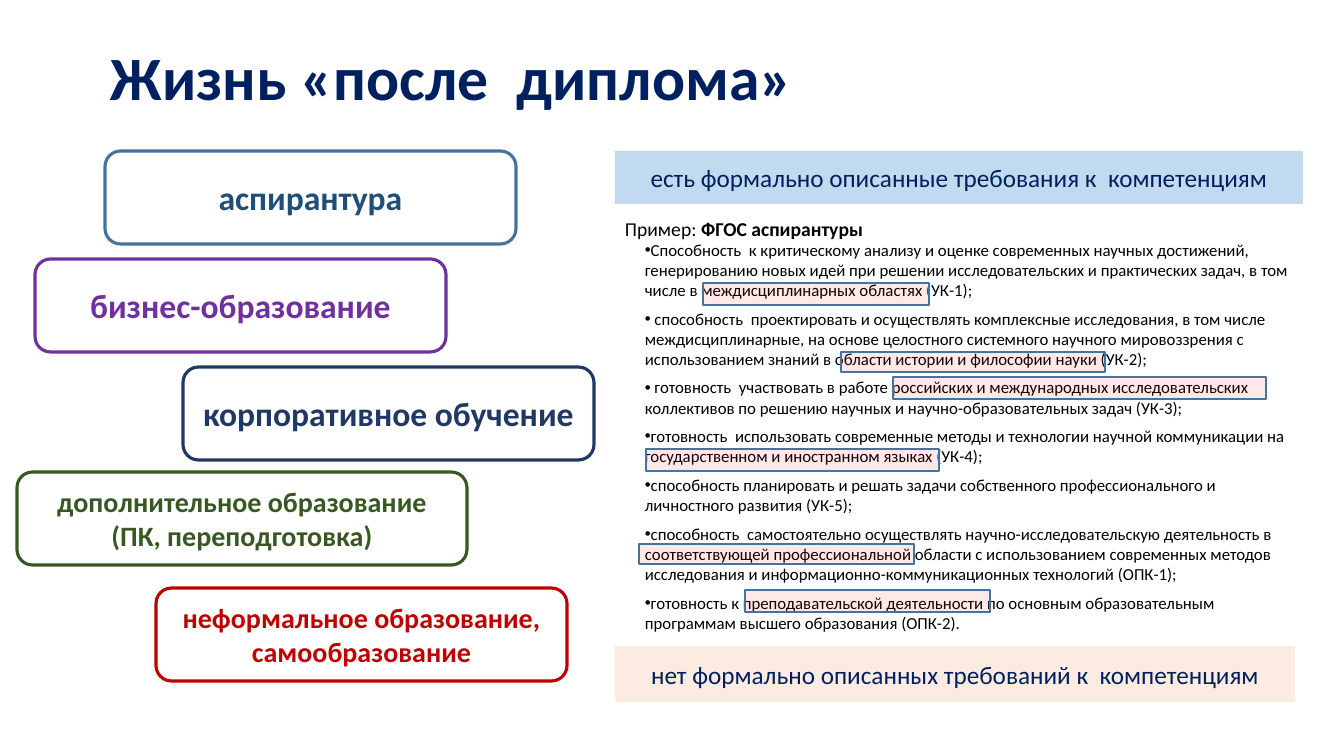
from dataclasses import dataclass
from lxml.etree import SubElement
from pptx import Presentation
from pptx.dml.color import RGBColor
from pptx.enum.shapes import MSO_SHAPE
from pptx.enum.text import MSO_ANCHOR, PP_ALIGN
from pptx.oxml.ns import qn
from pptx.util import Pt

# Content; boxes are (left, top, width, height) in px
TITLE = "Жизнь «после  диплома»"
TITLE_BOX = (87, 42, 1159, 146)

# text lines, left, top, width, size name, colour name
EDUCATION_PATHS = [
    (["аспирантура"], 105, 151, 411, "path", "blue"),
    (["бизнес-образование"], 35, 259, 411, "path", "purple"),
    (["корпоративное обучение"], 183, 367, 411, "path", "navy"),
    (["дополнительное образование (ПК, переподготовка)"], 17, 472, 450, "long_path", "green"),
    (["неформальное образование,", "самообразование"], 156, 588, 411, "long_path", "red"),
]
PATH_HEIGHT = 93

BANNERS = [
    ("есть формально описанные требования к  компетенциям", (615, 151, 688, 53), "described"),
    ("нет формально описанных требований к  компетенциям", (615, 646, 680, 56), "undescribed"),
]

EXAMPLE = ("Пример: ", "ФГОС аспирантуры")
EXAMPLE_BOX = (615, 218, 704, 428)
COMPETENCIES = [
    "Способность  к критическому анализу и оценке современных научных достижений, генерированию "
    "новых идей при решении исследовательских и практических задач, в том числе в "
    "междисциплинарных областях (УК-1);",
    " способность  проектировать и осуществлять комплексные исследования, в том числе "
    "междисциплинарные, на основе целостного системного научного мировоззрения с использованием "
    "знаний в области истории и философии науки (УК-2);",
    " готовность  участвовать в работе российских и международных исследовательских коллективов "
    "по решению научных и научно-образовательных задач (УК-3);",
    "готовность  использовать современные методы и технологии научной коммуникации на "
    "государственном и иностранном языках (УК-4);",
    "способность планировать и решать задачи собственного профессионального и личностного "
    "развития (УК-5);",
    "способность  самостоятельно осуществлять научно-исследовательскую деятельность в "
    "соответствующей профессиональной области с использованием современных методов исследования "
    "и информационно-коммуникационных технологий (ОПК-1);",
    "готовность к преподавательской деятельности по основным образовательным программам высшего "
    "образования (ОПК-2).",
]
HIGHLIGHTS = [
    (703, 283, 226, 22),
    (841, 352, 264, 20),
    (893, 377, 373, 22),
    (639, 544, 275, 20),
    (745, 590, 245, 22),
    (646, 449, 293, 22),
]


@dataclass(frozen=True)
class Theme:
    font = "Calibri"
    colors = {
        "title": "002060", "text": "000000", "white": "FFFFFF", "outline": "43739E",
        "blue": "1F4E79", "purple": "7030A0", "navy": "203864", "green": "385723",
        "red": "C00000", "described": "5B9BD5", "undescribed": "F8CBAD", "highlight": "FF0000",
    }
    sizes = {"title": 44, "path": 24, "long_path": 20, "banner": 18, "example": 14, "item": 12}
    path_line = 2.25
    highlight_line = 1
    banner_alpha = 37
    highlight_alpha = 9


THEME = Theme()
PX = 914400 / 100.8


def px(length):
    return round(length * PX)


def color(name):
    return RGBColor.from_string(THEME.colors[name])


def write(paragraph, text, size="item", ink="text", bold=False, align=PP_ALIGN.LEFT):
    run = paragraph.add_run()
    run.text = text
    run.font.name = THEME.font
    run.font.size = Pt(THEME.sizes[size])
    run.font.bold = bold
    run.font.color.rgb = color(ink)
    paragraph.alignment = align


def add_panel(slide, kind, box, fill, alpha=100, line=None, line_width=1):
    panel = slide.shapes.add_shape(kind, *map(px, box))
    panel.shadow.inherit = False
    panel.fill.solid()
    panel.fill.fore_color.rgb = color(fill)
    if alpha < 100:
        fill_color = panel.fill._xPr.find(qn("a:solidFill"))[0]
        SubElement(fill_color, qn("a:alpha"), val=str(alpha * 1000))
    if line:
        panel.line.color.rgb = color(line)
        panel.line.width = Pt(line_width)
    else:
        panel.line.fill.background()
    panel.text_frame.word_wrap = True
    panel.text_frame.vertical_anchor = MSO_ANCHOR.MIDDLE
    return panel.text_frame


def add_text_area(slide, box):
    frame = slide.shapes.add_textbox(*map(px, box)).text_frame
    frame.word_wrap = True
    return frame


def next_paragraph(frame, index):
    return frame.paragraphs[0] if index == 0 else frame.add_paragraph()


def add_title(slide):
    frame = add_text_area(slide, TITLE_BOX)
    frame.margin_left = px(24)
    heading = frame.paragraphs[0]
    heading.line_spacing = 0.9
    write(heading, TITLE, size="title", ink="title", bold=True)


def add_example(slide):
    frame = add_text_area(slide, EXAMPLE_BOX)
    heading = frame.paragraphs[0]
    heading.line_spacing = 0.7
    heading.space_before = Pt(10)
    for bold, part in enumerate(EXAMPLE):
        write(heading, part, size="example", bold=bool(bold))
    for competency in COMPETENCIES:
        item = frame.add_paragraph()
        write(item, competency)
        item.space_after = Pt(6)
        properties = item._p.get_or_add_pPr()
        properties.set("marL", str(px(20)))
        properties.set("indent", "0")
        SubElement(properties, qn("a:buFont"), typeface="Arial")
        SubElement(properties, qn("a:buChar"), char="•")


def add_education_paths(slide):
    for lines, left, top, width, size, ink in EDUCATION_PATHS:
        outline = "outline" if ink == "blue" else ink
        frame = add_panel(slide, MSO_SHAPE.ROUNDED_RECTANGLE, (left, top, width, PATH_HEIGHT),
                          "white", line=outline, line_width=THEME.path_line)
        for index, line in enumerate(lines):
            write(next_paragraph(frame, index), line, size=size, ink=ink, bold=True,
                  align=PP_ALIGN.CENTER)


def add_banners(slide):
    for text, box, fill in BANNERS:
        frame = add_panel(slide, MSO_SHAPE.RECTANGLE, box, fill, alpha=THEME.banner_alpha)
        write(frame.paragraphs[0], text, size="banner", ink="title", align=PP_ALIGN.CENTER)


def add_highlights(slide):
    for box in HIGHLIGHTS:
        add_panel(slide, MSO_SHAPE.RECTANGLE, box, "highlight", alpha=THEME.highlight_alpha,
                  line="outline", line_width=THEME.highlight_line)


def main():
    deck = Presentation()
    deck.slide_width, deck.slide_height = px(1344), px(756)
    slide = deck.slides.add_slide(deck.slide_layouts[6])
    add_title(slide)
    add_example(slide)
    add_education_paths(slide)
    add_banners(slide)
    add_highlights(slide)
    deck.save("out.pptx")


if __name__ == "__main__":
    main()
